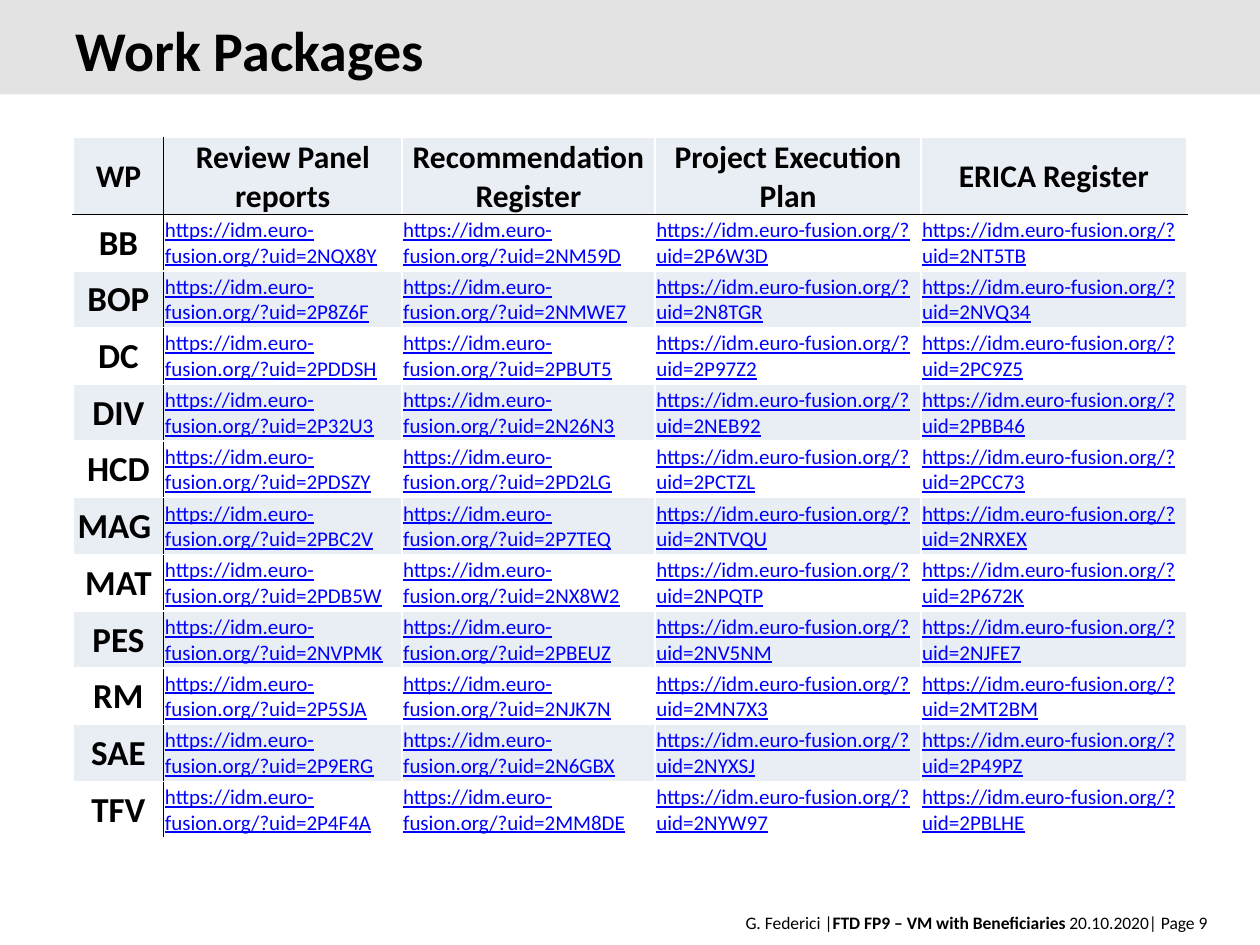
from lxml.etree import SubElement
from pptx import Presentation
from pptx.dml.color import RGBColor
from pptx.enum.shapes import MSO_SHAPE
from pptx.enum.text import MSO_ANCHOR, MSO_AUTO_SIZE, PP_ALIGN
from pptx.oxml.ns import qn
from pptx.util import Inches, Pt

FONT = "Calibri"
COLORS = {"text": "000000", "link": "0000FF", "bar": "E3E3E3",
          "band": "E9EDF4", "rule": "000000", "grid": "FFFFFF"}
URL = "https://idm.euro-fusion.org/?uid="
HEADERS = ["WP", "Review Panel reports", "Recommendation Register",
           "Project Execution Plan", "ERICA Register"]
PACKAGES = [
    ("BB", "2NQX8Y", "2NM59D", "2P6W3D", "2NT5TB"),
    ("BOP", "2P8Z6F", "2NMWE7", "2N8TGR", "2NVQ34"),
    ("DC", "2PDDSH", "2PBUT5", "2P97Z2", "2PC9Z5"),
    ("DIV", "2P32U3", "2N26N3", "2NEB92", "2PBB46"),
    ("HCD", "2PDSZY", "2PD2LG", "2PCTZL", "2PCC73"),
    ("MAG ", "2PBC2V", "2P7TEQ", "2NTVQU", "2NRXEX"),
    ("MAT", "2PDB5W", "2NX8W2", "2NPQTP", "2P672K"),
    ("PES", "2NVPMK", "2PBEUZ", "2NV5NM", "2NJFE7"),
    ("RM", "2P5SJA", "2NJK7N", "2MN7X3", "2MT2BM"),
    ("SAE", "2P9ERG", "2N6GBX", "2NYXSJ", "2P49PZ"),
    ("TFV", "2P4F4A", "2MM8DE", "2NYW97", "2PBLHE"),
]
COL_WIDTHS = [0.72, 1.89, 2.01, 2.11, 2.11]
HEADER_HEIGHT, ROW_HEIGHT = 0.6, 0.45


def rgb(name):
    return RGBColor.from_string(COLORS[name])


def style_run(r, size, color="text", bold=False, underline=False):
    font = r.font
    font.name, font.size = FONT, Pt(size)
    font.bold, font.underline = bold, underline
    font.color.rgb = rgb(color)


def set_borders(cell, **sides):
    """Draw 1 pt cell borders; sides maps L, R, T, B to colour names."""
    tcPr = cell._tc.get_or_add_tcPr()
    for side in "LRTB":
        ln = SubElement(tcPr, qn(f"a:ln{side}"), w=str(Pt(1)))
        fill = SubElement(ln, qn("a:solidFill"))
        SubElement(fill, qn("a:srgbClr"), val=COLORS[sides[side]])


def add_title(slide, box):
    left, top, width, height = box
    bar = slide.shapes.add_shape(MSO_SHAPE.RECTANGLE, left, top, width, height)
    bar.shadow.inherit = False
    bar.fill.solid()
    bar.fill.fore_color.rgb = rgb("bar")
    bar.line.fill.background()
    slide.shapes._spTree.insert(2, bar._element)

    title = slide.shapes.title
    title.left, title.top = left + int(width * 0.05), top + int(height * 0.24)
    title.width, title.height = int(width * 0.825), int(height * 0.67)
    tf = title.text_frame
    tf.text = "Work Packages"
    tf.auto_size = MSO_AUTO_SIZE.NONE
    tf.vertical_anchor = MSO_ANCHOR.MIDDLE
    p = tf.paragraphs[0]
    p.alignment, p.line_spacing = PP_ALIGN.LEFT, Pt(32)
    style_run(p.runs[0], 32, bold=True)


def fill_cell(cell, row, col):
    header, name = row == 0, col == 0
    set_borders(cell,
                L="rule" if col == 1 else "grid",
                R="rule" if name else "grid",
                T="rule" if row == 1 else "grid",
                B="rule" if header else "grid")
    if row % 2 == 0:
        cell.fill.solid()
        cell.fill.fore_color.rgb = rgb("band")
    else:
        cell.fill.background()
    cell.margin_left = cell.margin_right = cell.margin_top = Inches(0.01)
    cell.margin_bottom = 0
    cell.vertical_anchor = MSO_ANCHOR.MIDDLE

    p = cell.text_frame.paragraphs[0]
    if header:
        p.text = HEADERS[col]
    else:
        value = PACKAGES[row - 1][col]
        p.text = value if name else URL + value
    r = p.runs[0]
    if header or name:
        p.alignment = PP_ALIGN.CENTER
        style_run(r, 18 if header else 20, bold=True)
    else:
        p.alignment = PP_ALIGN.LEFT
        style_run(r, 12, "link", underline=True)


def add_package_table(slide, box):
    rows, cols = len(PACKAGES) + 1, len(HEADERS)
    table = slide.shapes.add_table(rows, cols, *box).table
    table.horz_banding = False
    for column, width in zip(table.columns, COL_WIDTHS):
        column.width = Inches(width)
    for row, line in enumerate(table.rows):
        line.height = Inches(ROW_HEIGHT if row else HEADER_HEIGHT)
        for col, cell in enumerate(line.cells):
            fill_cell(cell, row, col)


def add_footer(slide, box):
    tf = slide.shapes.add_textbox(*box).text_frame
    tf.word_wrap = True
    tf.vertical_anchor = MSO_ANCHOR.MIDDLE
    p = tf.paragraphs[0]
    p.alignment = PP_ALIGN.RIGHT
    for text, bold in [("G. Federici |", False),
                       ("FTD FP9 – VM with Beneficiaries", True),
                       (" 20.10.2020| Page 9", False)]:
        r = p.add_run()
        r.text = text
        style_run(r, 10, bold=bold)


def main():
    prs = Presentation()
    prs.slide_width, prs.slide_height = Inches(10), Inches(7.5)
    w, h = prs.slide_width, prs.slide_height
    slide = prs.slides.add_slide(prs.slide_layouts[5])
    add_title(slide, (0, 0, w, int(h * 0.1)))
    add_footer(slide, (Inches(0.67), int(h * 0.96), Inches(9.01), Inches(0.25)))
    table_height = HEADER_HEIGHT + ROW_HEIGHT * len(PACKAGES)
    add_package_table(slide, (Inches(0.58), Inches(1.09),
                              Inches(sum(COL_WIDTHS)), Inches(table_height)))
    prs.save("out.pptx")


if __name__ == "__main__":
    main()
